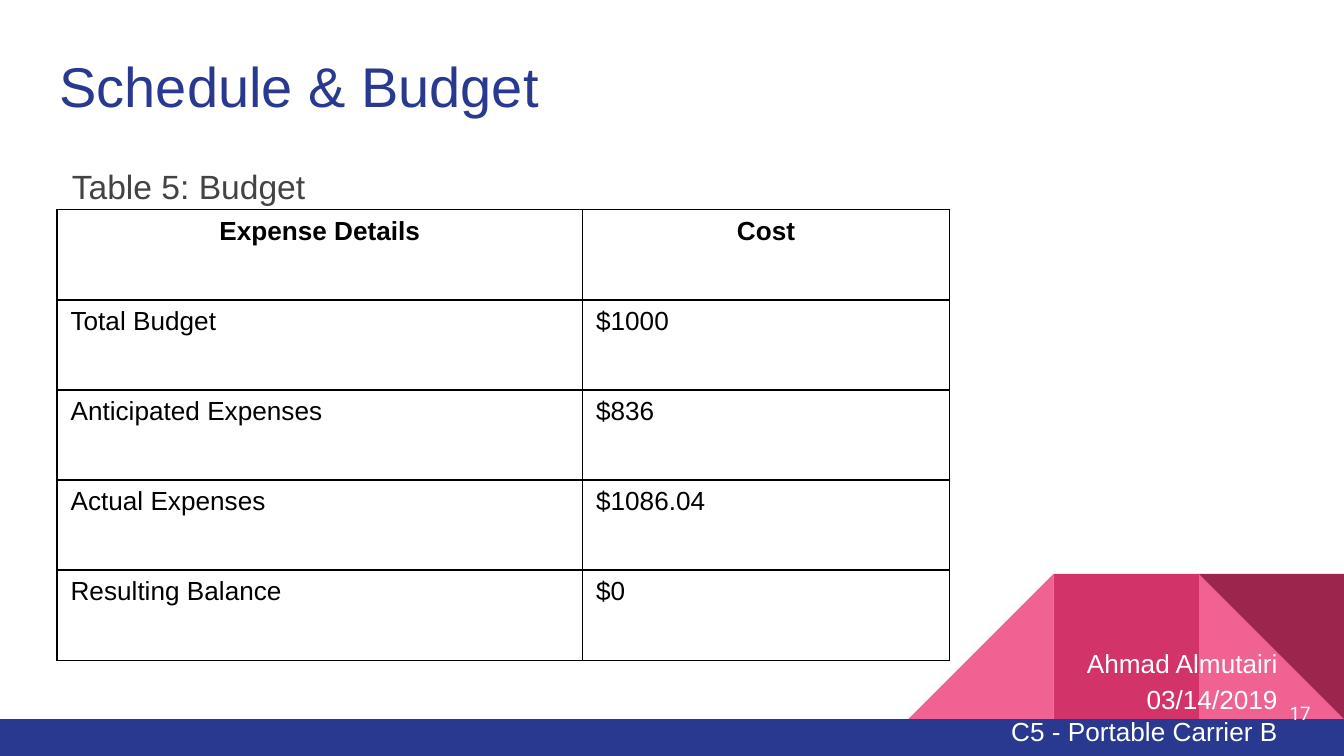
from dataclasses import dataclass

from lxml import etree
from pptx import Presentation
from pptx.dml.color import RGBColor
from pptx.enum.shapes import MSO_SHAPE
from pptx.enum.text import MSO_ANCHOR, PP_ALIGN
from pptx.oxml.ns import qn
from pptx.util import Emu, Pt

RECT, TRIANGLE = MSO_SHAPE.RECTANGLE, MSO_SHAPE.RIGHT_TRIANGLE
TOP, MIDDLE = MSO_ANCHOR.TOP, MSO_ANCHOR.MIDDLE
LEFT, CENTER, RIGHT = PP_ALIGN.LEFT, PP_ALIGN.CENTER, PP_ALIGN.RIGHT
EMU_PER_PX = 4572


@dataclass(frozen=True)
class Theme:
    """Colours, fonts and type sizes of the slide."""
    navy: str = "2A3990"
    pink: str = "F06292"
    rose: str = "D23369"
    wine: str = "9C254D"
    grey: str = "434343"
    black: str = "000000"
    white: str = "FFFFFF"
    font: str = "Arial"
    number_font: str = "Roboto"
    title: int = 30
    caption: int = 18
    body: int = 14
    number: int = 10


THEME = Theme()
BUDGET = [
    ("Expense Details", "Cost"),
    ("Total Budget", "$1000"),
    ("Anticipated Expenses", "$836"),
    ("Actual Expenses", "$1086.04"),
    ("Resulting Balance", "$0"),
]


def px(n):
    """Turn px into EMU."""
    return Emu(n * EMU_PER_PX)


def style_text(tf, size, color, font=THEME.font, align=LEFT, bold=False):
    """Format every paragraph and run of a text frame."""
    for p in tf.paragraphs:
        p.alignment = align
        for r in p.runs:
            r.font.size = Pt(size)
            r.font.name = font
            r.font.bold = bold
            r.font.color.rgb = RGBColor.from_string(color)


def add_text(s, box, text, size, color, font=THEME.font, align=LEFT, anchor=TOP, inset=20):
    """Add a wrapping text box and return its text frame."""
    tf = s.shapes.add_textbox(*map(px, box)).text_frame
    tf.word_wrap = True
    tf.vertical_anchor = anchor
    tf.margin_left = px(inset)
    tf.margin_right = tf.margin_top = tf.margin_bottom = px(20)
    tf.text = text
    style_text(tf, size, color, font, align)
    return tf


def add_block(s, kind, box, color):
    """Add a plain filled shape without outline."""
    sp = s.shapes.add_shape(kind, *map(px, box))
    sp.shadow.inherit = False
    sp.fill.solid()
    sp.fill.fore_color.rgb = RGBColor.from_string(color)
    sp.line.fill.background()
    return sp


def add_decor(s, box):
    """Draw the folded corner and the bar along the bottom of the box."""
    left, top, width, height = box
    bar, side = 55, 216
    floor = top + height - bar
    far, middle, near = [(left + width - n * side, floor - side, side, side) for n in (1, 2, 3)]
    add_block(s, TRIANGLE, far, THEME.pink)
    slope = add_block(s, TRIANGLE, near, THEME.pink)
    slope._element.spPr.find(qn("a:xfrm")).set("flipH", "1")
    add_block(s, RECT, middle, THEME.rose)
    add_block(s, TRIANGLE, far, THEME.wine).rotation = 180
    add_block(s, RECT, (left, floor, width, bar), THEME.navy)


def set_borders(cell, color):
    """Give a cell a one-point line on all four sides."""
    tc_pr = cell._tc.get_or_add_tcPr()
    for i, side in enumerate(("lnL", "lnR", "lnT", "lnB")):
        ln = etree.Element(qn(f"a:{side}"), w=str(Pt(1)))
        fill = etree.SubElement(ln, qn("a:solidFill"))
        etree.SubElement(fill, qn("a:srgbClr"), val=color)
        tc_pr.insert(i, ln)


def add_budget_table(s, box):
    """Add the budget table, with equal rows, in the box."""
    table = s.shapes.add_table(len(BUDGET), 2, *map(px, box)).table
    table.horz_banding = False
    first = 782
    table.columns[0].width, table.columns[1].width = px(first), px(box[2] - first)
    for i, row in enumerate(BUDGET):
        for j, text in enumerate(row):
            cell = table.cell(i, j)
            cell.fill.background()
            cell.margin_left = cell.margin_right = px(20)
            cell.margin_top = cell.margin_bottom = px(10)
            cell.text_frame.text = text
            style_text(cell.text_frame, THEME.body, THEME.black,
                       align=LEFT if i else CENTER, bold=i == 0)
            set_borders(cell, THEME.black)


def add_heading(s, box):
    """Add the title and the table caption below it."""
    left, top, width, _ = box
    add_text(s, (left, top, width, 132), "Schedule & Budget", THEME.title, THEME.navy)
    tf = add_text(s, (left - 32, top + 161, 472, 146), "Table 5: Budget",
                  THEME.caption, THEME.grey, inset=70)
    tf.paragraphs[0].line_spacing = 1.15


def add_footer(s, box):
    """Add the slide number and the right-aligned credits."""
    left, top, width, height = box
    add_text(s, (left + 585, top + 74, 120, 86), "17", THEME.number, THEME.white,
             THEME.number_font, RIGHT, MIDDLE)
    tf = add_text(s, (left, top, width, height),
                  "Ahmad Almutairi\n03/14/2019\nC5 - Portable Carrier B",
                  THEME.body, THEME.white, align=RIGHT)
    tf.paragraphs[1].line_spacing = 1.15


def main():
    """Build and save the slide."""
    prs = Presentation()
    prs.slide_width, prs.slide_height = px(2000), px(1125)
    s = prs.slides.add_slide(prs.slide_layouts[6])
    add_decor(s, (0, 0, 2000, 1125))
    add_heading(s, (69, 57, 1864, 307))
    add_budget_table(s, (85, 312, 1328, 671))
    add_footer(s, (265 + 1000, 944, 656, 656))
    prs.save("out.pptx")


if __name__ == "__main__":
    main()
